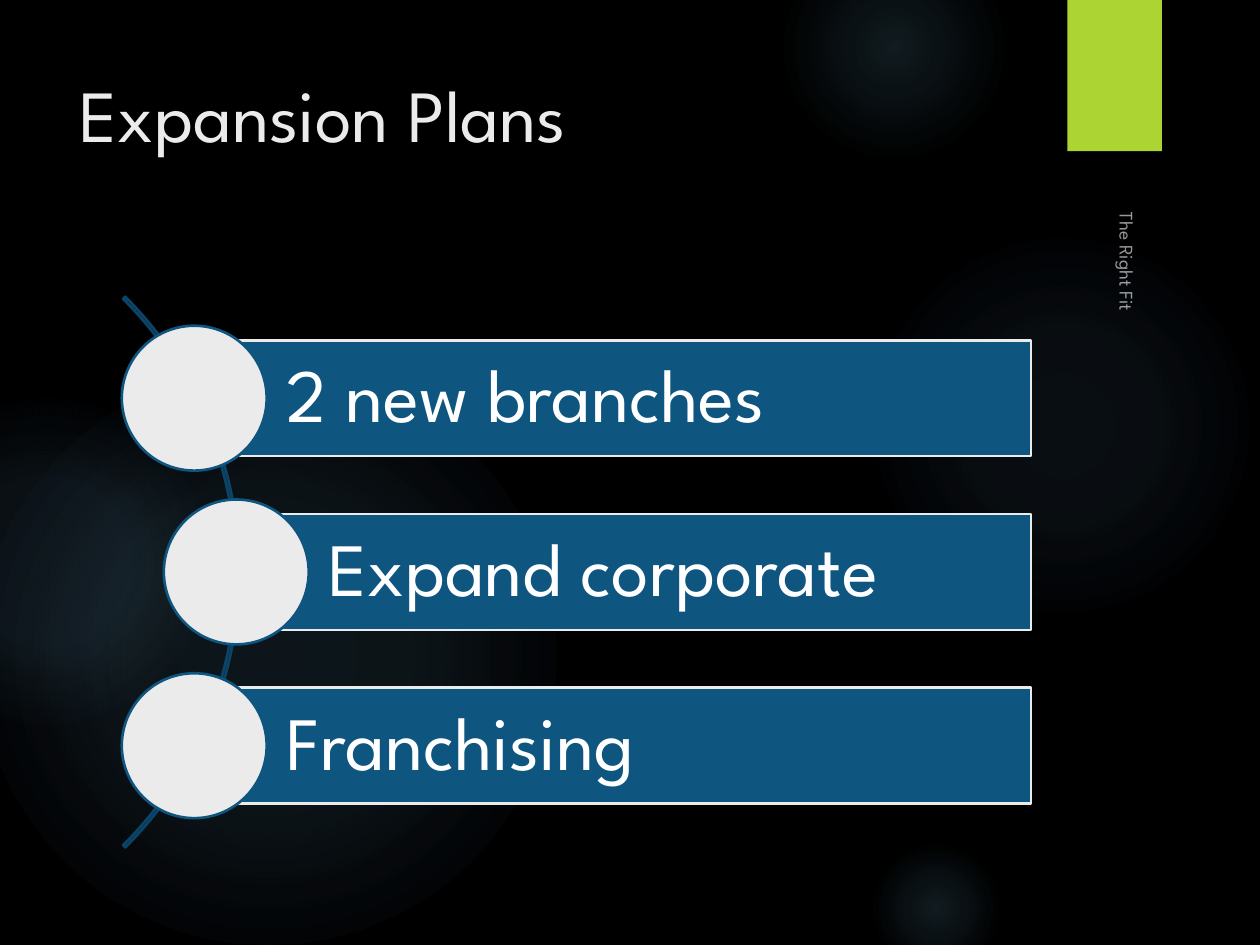
from dataclasses import dataclass

from pptx import Presentation
from pptx.dml.color import RGBColor
from pptx.enum.shapes import MSO_SHAPE
from pptx.enum.text import MSO_ANCHOR, MSO_AUTO_SIZE, PP_ALIGN
from pptx.oxml import parse_xml
from pptx.oxml.ns import nsdecls, qn
from pptx.util import Pt


@dataclass(frozen=True)
class Theme:
    """Colours, font and type sizes of the slide."""

    background: str = "000000"
    light: str = "EBEBEB"
    white: str = "FFFFFF"
    blue: str = "0E5580"
    arc: str = "0B4467"
    glow: str = "7AC4F0"
    accent: str = "ACD433"
    font: str = "League Spartan"
    title_size: float = 42
    bar_size: float = 43
    footer_size: float = 11
    line_width: float = 1.5


THEME = Theme()

GLOWS = [
    (496, 132, 222, [(0, 7), (36, 6), (69, 0)]),
    (448, -36, 126, [(0, 14), (36, 7), (73, 0)]),
    (496, 480, 78, [(0, 14), (36, 7), (66, 0)]),
    (-12, 210, 330, [(0, 11), (36, 10), (75, 0)]),
    (-66, 228, 186, [(0, 8), (36, 8), (72, 0)]),
]

PLANS = [("2 new branches", 111), ("Expand corporate", 135), ("Franchising", 111)]
BAR_RIGHT, BAR_TOP, BAR_HEIGHT, BAR_PITCH = 589.2, 194.4, 66.24, 99.3
CIRCLE_SIZE = 82.8


def add_box(slide, preset, left, top, width, height, fill=None, line=None):
    """Add a preset shape without shadow, with optional fill and outline."""
    shape = slide.shapes.add_shape(preset, Pt(left), Pt(top), Pt(width), Pt(height))
    shape.shadow.inherit = False
    if fill:
        shape.fill.solid()
        shape.fill.fore_color.rgb = RGBColor.from_string(fill)
    else:
        shape.fill.background()
    if line:
        shape.line.color.rgb = RGBColor.from_string(line)
        shape.line.width = Pt(THEME.line_width)
    else:
        shape.line.fill.background()
    return shape


def add_glow(slide, left, top, size, stops):
    """Add a circle that fades outwards through stops of position and opacity."""
    shape = add_box(slide, MSO_SHAPE.OVAL, left, top, size, size)
    stop_xml = "".join(
        f'<a:gs pos="{position * 1000}"><a:srgbClr val="{THEME.glow}">'
        f'<a:alpha val="{opacity * 1000}"/></a:srgbClr></a:gs>'
        for position, opacity in stops
    )
    gradient = parse_xml(
        f'<a:gradFill {nsdecls("a")} rotWithShape="1"><a:gsLst>{stop_xml}</a:gsLst>'
        '<a:path path="circle"><a:fillToRect l="50000" t="50000" r="50000" b="50000"/>'
        "</a:path></a:gradFill>"
    )
    properties = shape.element.spPr
    properties.replace(properties.find(qn("a:noFill")), gradient)


def add_accent_tab(slide):
    """Add the green tab at the top edge with its soft shadow."""
    tab = add_box(slide, MSO_SHAPE.RECTANGLE, 610, 0, 54, 86.4, THEME.accent)
    effects = tab.element.spPr.find(qn("a:effectLst"))
    effects.append(parse_xml(
        f'<a:outerShdw {nsdecls("a")} blurRad="{Pt(3)}" dist="{Pt(2)}" dir="5400000" '
        'rotWithShape="0"><a:srgbClr val="000000"><a:alpha val="45000"/></a:srgbClr>'
        "</a:outerShdw>"
    ))


def write_text(shape, text, size, color, anchor):
    """Write one left-aligned run into a shape and return its run."""
    frame = shape.text_frame
    frame.word_wrap = True
    frame.auto_size = MSO_AUTO_SIZE.NONE
    frame.vertical_anchor = anchor
    paragraph = frame.paragraphs[0]
    paragraph.alignment = PP_ALIGN.LEFT
    run = paragraph.add_run()
    run.text = text
    run.font.name = THEME.font
    run.font.size = Pt(size)
    run.font.color.rgb = RGBColor.from_string(color)
    return run


def add_title(slide, text):
    """Place and fill the title placeholder."""
    title = slide.shapes.title
    title.left, title.top, title.width, title.height = Pt(38), Pt(36), Pt(556), Pt(110)
    write_text(title, text, THEME.title_size, THEME.light, MSO_ANCHOR.TOP)


def add_arc(slide):
    """Add the thin arc that links the plan circles."""
    arc = add_box(slide, MSO_SHAPE.BLOCK_ARC, -308.2, 104.4, 445, 445, line=THEME.arc)
    for index, value in enumerate((189, 27, 0.004)):
        arc.adjustments[index] = value


def add_plan(slide, text, left, top):
    """Add a labelled bar with a circle centred on its left side."""
    bar = add_box(slide, MSO_SHAPE.RECTANGLE, left, top, BAR_RIGHT - left, BAR_HEIGHT,
                  THEME.blue, THEME.light)
    frame = bar.text_frame
    frame.margin_left = Pt(52.6)
    frame.margin_top = frame.margin_right = frame.margin_bottom = Pt(8.6)
    write_text(bar, text, THEME.bar_size, THEME.white, MSO_ANCHOR.MIDDLE)
    frame.paragraphs[0].line_spacing = 0.9
    add_box(slide, MSO_SHAPE.OVAL, left - CIRCLE_SIZE / 2,
            top + (BAR_HEIGHT - CIRCLE_SIZE) / 2, CIRCLE_SIZE, CIRCLE_SIZE,
            THEME.light, THEME.blue)


def add_side_footer(slide, text):
    """Add the translucent footer that runs down the right side."""
    footer = slide.shapes.add_textbox(Pt(491), Pt(257), Pt(304), Pt(18))
    footer.rotation = 90
    run = write_text(footer, text, THEME.footer_size, THEME.white, MSO_ANCHOR.BOTTOM)
    color = run.font.fill._xPr.find(qn("a:solidFill"))[0]
    color.append(parse_xml(f'<a:alpha {nsdecls("a")} val="60000"/>'))


def main():
    """Build and save the slide."""
    presentation = Presentation()
    presentation.slide_width, presentation.slide_height = Pt(720), Pt(540)
    slide = presentation.slides.add_slide(presentation.slide_layouts[5])
    slide.background.fill.solid()
    slide.background.fill.fore_color.rgb = RGBColor.from_string(THEME.background)
    for glow in GLOWS:
        add_glow(slide, *glow)
    add_accent_tab(slide)
    add_title(slide, "Expansion Plans")
    add_arc(slide)
    for row, (text, left) in enumerate(PLANS):
        add_plan(slide, text, left, BAR_TOP + row * BAR_PITCH)
    add_side_footer(slide, "The Right Fit")
    presentation.save("out.pptx")


if __name__ == "__main__":
    main()
